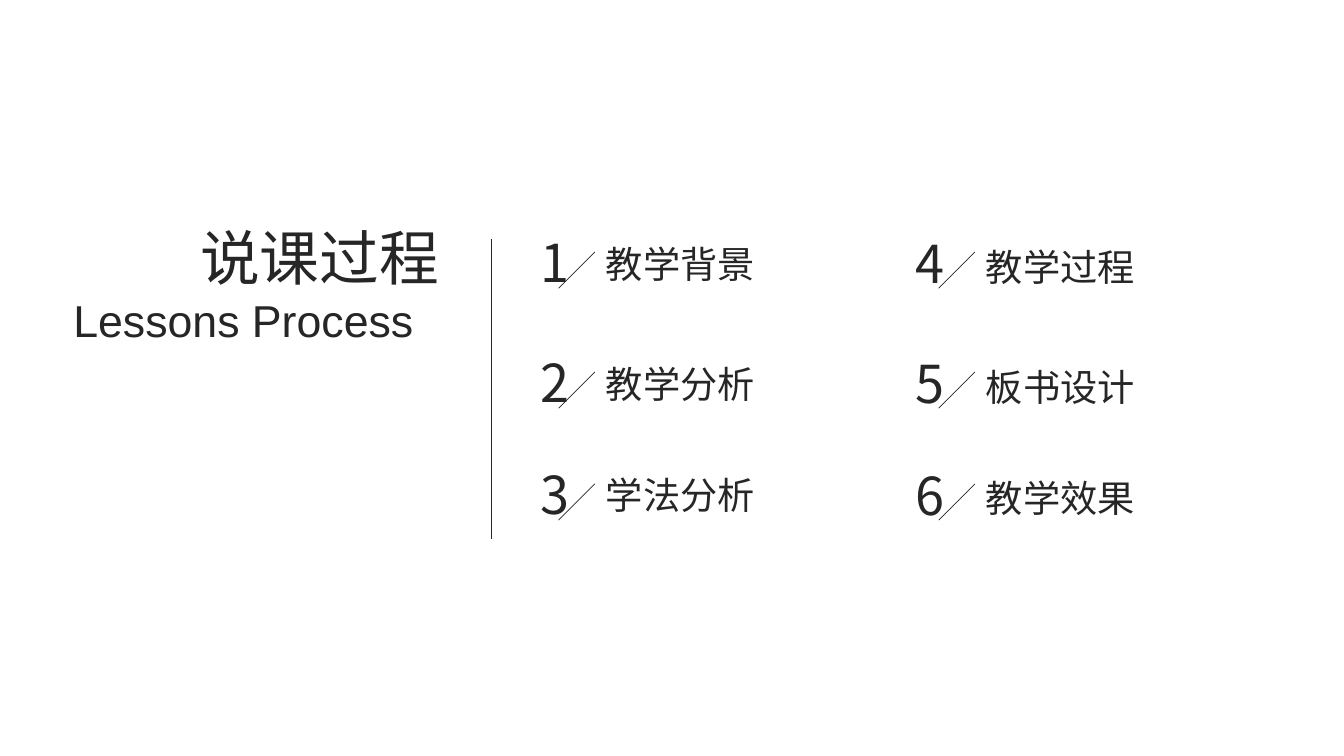
from dataclasses import dataclass

from pptx import Presentation
from pptx import util as u
from pptx.dml.color import RGBColor
from pptx.enum import shapes, text
from pptx.oxml.ns import qn
from pptx.shapes.shapetree import GroupShapes, SlideShapes
from lxml import etree

EMU_PER_PX = 9144  # 100 px to the inch


@dataclass(frozen=True)
class Theme:
    ink: RGBColor = RGBColor(0x26, 0x26, 0x26)
    chinese: str = "Noto Sans CJK SC"
    english: str = "Arial"
    title_size: float = 42.6
    subtitle_size: float = 31.9
    number_size: float = 37.3
    topic_size: float = 26.6
    rule_width: float = 0.5


@dataclass(frozen=True)
class Box:
    left: int
    top: int
    width: int
    height: int


@dataclass(frozen=True)
class Column:
    number_left: int
    slash_left: int
    topic_left: int
    number_rise: int  # from the top of the slash up to the number box
    topic_rise: int  # from the top of the slash up to the topic box
    topics: tuple[str, ...]


THEME = Theme()
ROW_TOPS = (250, 369, 480)
SLASH_SIZE = 36
COLUMNS = (
    Column(526, 554, 591, 26, 16, ("教学背景", "教学分析", "学法分析")),
    Column(898, 931, 968, 25, 13, ("教学过程", "板书设计", "教学效果")),
)


def px(length: int) -> u.Emu:
    return u.Emu(length * EMU_PER_PX)


def add_label(parent: SlideShapes | GroupShapes, box: Box, words: str,
              size: float, font_name: str, align: text.PP_ALIGN,
              wrap: bool = True) -> None:
    label = parent.add_textbox(px(box.left), px(box.top), px(box.width), px(box.height))
    frame = label.text_frame
    frame.word_wrap = wrap
    frame.auto_size = text.MSO_AUTO_SIZE.SHAPE_TO_FIT_TEXT
    frame.text = words
    paragraph = frame.paragraphs[0]
    paragraph.alignment = align
    run = paragraph.runs[0]
    run.font.size = u.Pt(size)
    run.font.color.rgb = THEME.ink
    run.font.name = font_name
    # Chinese glyphs take the East Asian typeface
    etree.SubElement(run.font._element, qn("a:ea"), typeface=font_name)


def add_rule(parent: SlideShapes | GroupShapes, x1: int, y1: int, x2: int, y2: int) -> None:
    rule = parent.add_connector(shapes.MSO_CONNECTOR.STRAIGHT, px(x1), px(y1), px(x2), px(y2))
    rule.line.color.rgb = THEME.ink
    rule.line.width = u.Pt(THEME.rule_width)
    etree.SubElement(rule._element.spPr, qn("a:effectLst"))


def add_topic(canvas: SlideShapes, column: Column, row_top: int, number: int, topic: str) -> None:
    add_label(canvas, Box(column.topic_left, row_top - column.topic_rise, 205, 55), topic,
              THEME.topic_size, THEME.chinese, text.PP_ALIGN.LEFT)
    marker = canvas.add_group_shape().shapes
    add_label(marker, Box(column.number_left, row_top - column.number_rise, 49, 73), str(number),
              THEME.number_size, THEME.chinese, text.PP_ALIGN.CENTER, wrap=False)
    add_rule(marker, column.slash_left + SLASH_SIZE, row_top,
             column.slash_left, row_top + SLASH_SIZE)


def main() -> None:
    deck = Presentation()
    deck.slide_width, deck.slide_height = px(1333), px(750)
    canvas = deck.slides.add_slide(deck.slide_layouts[6]).shapes

    # Heading
    heading = canvas.add_group_shape().shapes
    add_label(heading, Box(42, 286, 399, 64), "Lessons Process",
              THEME.subtitle_size, THEME.english, text.PP_ALIGN.CENTER)
    add_label(heading, Box(131, 214, 314, 82), "说课过程",
              THEME.title_size, THEME.chinese, text.PP_ALIGN.RIGHT)

    # Divider
    add_rule(canvas, 487, 237, 487, 535)

    # Numbered topics, running down each column
    number = 1
    for column in COLUMNS:
        for row_top, topic in zip(ROW_TOPS, column.topics):
            add_topic(canvas, column, row_top, number, topic)
            number += 1

    deck.save("out.pptx")


if __name__ == "__main__":
    main()
